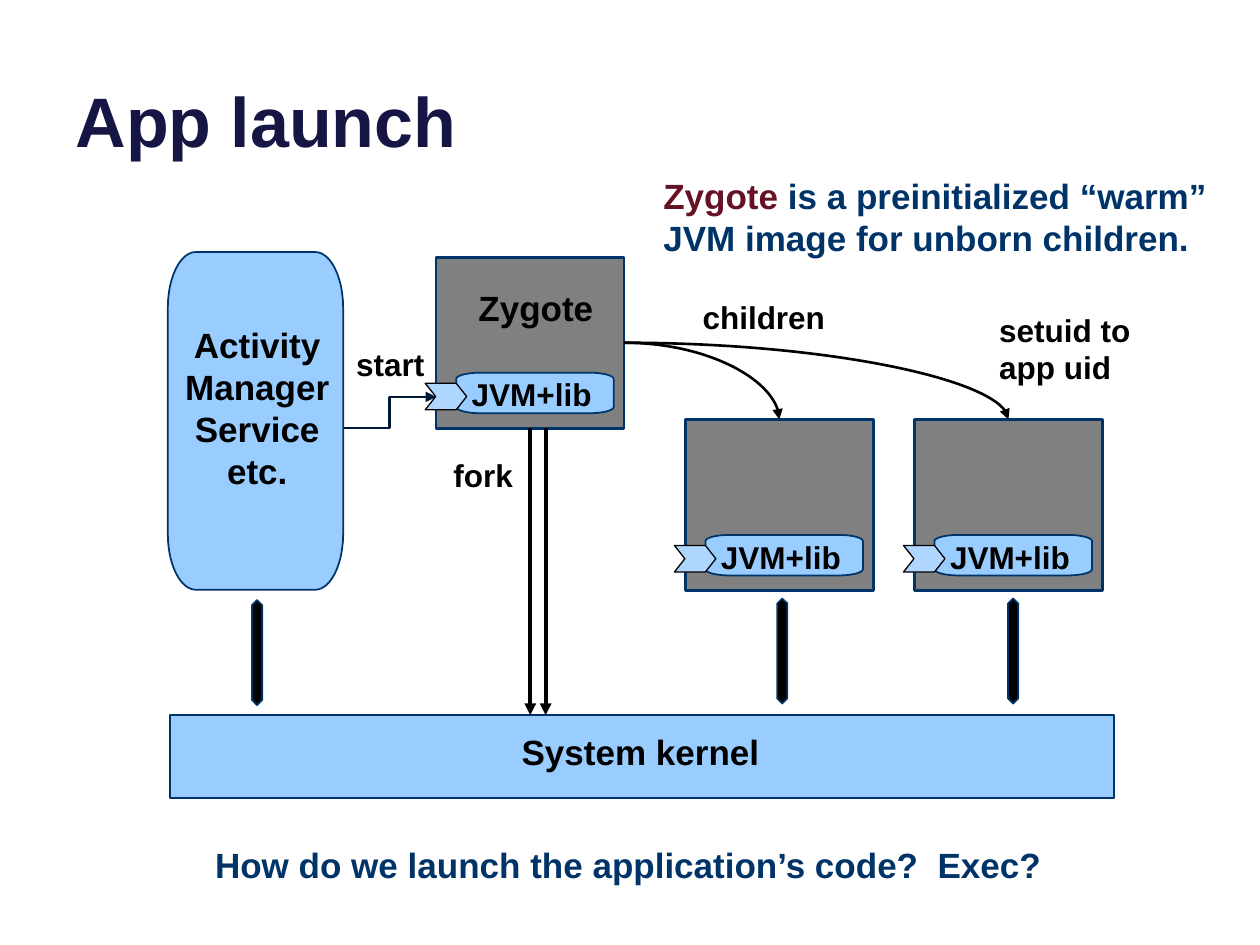
import math
import pptx
import pptx.util
import pptx.dml.color
import pptx.enum.shapes
import pptx.enum.text
import pptx.oxml
import pptx.oxml.ns

Pt = pptx.util.Pt
SHAPE = pptx.enum.shapes.MSO_SHAPE
CONNECTOR = pptx.enum.shapes.MSO_CONNECTOR
ALIGN = pptx.enum.text.PP_ALIGN
FONT = "Arial"
COLORS = {
    "title": "161645", "navy": "003367", "dark navy": "001934", "black": "000000",
    "maroon": "651222", "blue": "99CCFF", "pale blue": "AED6FF", "gray": "808080",
}

TITLE = "App launch"
MANAGER = (95.9, 144, 100.2, 193)
KERNEL = (97, 408.7, 539.5, 47.5)
PROCESS_SIZE = (107.5, 97.7)
ZYGOTE = (249.2, 147)
CHILDREN = [(391.6, 239.7), (522.5, 239.7)]
JVM_LABEL = "JVM+lib"
FORK_LINES = [303, 311.8]
KERNEL_ARROWS = [(144, 342.9), (444.1, 342), (576, 342)]
KERNEL_ARROW_SIZE = (5.8, 60)
LABELS = [
    (["System kernel"], (291, 414, 180, 31.5), 20, "black", ALIGN.LEFT),
    (["Activity Manager Service", "etc."], (84, 181.5, 126, 104.4), 20, "black", ALIGN.CENTER),
    (["Zygote"], (243.2, 160, 126, 31.5), 20, "black", ALIGN.CENTER),
    (["start"], (196.4, 193.8, 133, 29.1), 18, "black", ALIGN.LEFT),
    (["fork"], (252, 257.2, 133, 29.1), 18, "black", ALIGN.LEFT),
    (["children"], (394.4, 166.6, 133, 29.1), 18, "black", ALIGN.LEFT),
    (["setuid to app uid"], (563.9, 174, 96.5, 50.9), 18, "black", ALIGN.LEFT),
    (["How do we launch the application’s code?  Exec?"], (115.8, 478.7, 514, 31.5), 20, "navy", ALIGN.LEFT),
]
CAPTION = [("Zygote", "maroon"), (" is a preinitialized “warm” JVM image for unborn children.", "navy")]
CAPTION_BOX = (372, 96, 327, 55.7)

presentation = pptx.Presentation()
presentation.slide_width, presentation.slide_height = Pt(720), Pt(540)
slide = presentation.slides.add_slide(presentation.slide_layouts[5])


def color(name):
    return pptx.dml.color.RGBColor.from_string(COLORS[name])


def set_font(font, size, name):
    font.name, font.size, font.bold = FONT, Pt(size), True
    font.color.rgb = color(name)


def paint(shape, fill, line, width):
    shape.shadow.inherit = False
    shape.fill.solid()
    shape.fill.fore_color.rgb = color(fill)
    shape.line.color.rgb = color(line)
    shape.line.width = Pt(width)


def add_preset(kind, box, fill, width=1):
    shape = slide.shapes.add_shape(kind, *map(Pt, box))
    paint(shape, fill, "navy", width)
    return shape


def add_outline(points, fill, line, width):
    scaled = [(Pt(x), Pt(y)) for x, y in points]
    builder = slide.shapes.build_freeform(*scaled[0])
    builder.add_line_segments(scaled[1:], close=True)
    paint(builder.convert_to_shape(), fill, line, width)


def add_rounded(box, radius_x, radius_y):
    left, top, width, height = box
    right, bottom = left + width - radius_x, top + height - radius_y
    centers = [(right, bottom), (left + radius_x, bottom),
               (left + radius_x, top + radius_y), (right, top + radius_y)]
    points = []
    for corner, (x, y) in enumerate(centers):
        for step in range(13):
            angle = math.radians(corner * 90 + step * 7.5)
            points.append((x + radius_x * math.cos(angle), y + radius_y * math.sin(angle)))
    add_outline(points, "blue", "navy", 1)


def add_chevron(left, top):
    width, height, notch = 23.7, 15.2, 6
    middle = top + height / 2
    add_outline([(left, top), (left + width - notch, top), (left + width, middle),
                 (left + width - notch, top + height), (left, top + height),
                 (left + notch, middle)], "pale blue", "black", 0.75)


def add_text(lines, box, size, name, align=ALIGN.LEFT):
    frame = slide.shapes.add_textbox(*map(Pt, box)).text_frame
    frame.word_wrap = True
    frame.text = "\n".join(lines)
    for paragraph in frame.paragraphs:
        paragraph.alignment = align
        set_font(paragraph.font, size, name)
    return frame


def add_process(left, top):
    add_preset(SHAPE.RECTANGLE, (left, top, *PROCESS_SIZE), "gray", 1.5)
    add_rounded((left + 11.5, top + 66, 90, 23.2), 14, 3.6)
    add_chevron(left - 6.2, top + 72)
    add_text([JVM_LABEL], (left + 13.3, top + 64, 88, 29.1), 18, "black")


def add_arrow(kind, start, end, name, width):
    connector = slide.shapes.add_connector(kind, *map(Pt, (*start, *end)))
    connector.line.color.rgb = color(name)
    connector.line.width = Pt(width)
    properties = connector._element.spPr
    line = properties.find(pptx.oxml.ns.qn("a:ln"))
    line.append(line.makeelement(pptx.oxml.ns.qn("a:tailEnd"), {"type": "triangle"}))
    properties.append(properties.makeelement(pptx.oxml.ns.qn("a:effectLst")))
    if kind == CONNECTOR.CURVE:
        properties.find(pptx.oxml.ns.qn("a:prstGeom")).set("prst", "curvedConnector2")


title = slide.shapes.title
title.left, title.top, title.width, title.height = map(Pt, (36, -26.6, 648, 122.4))
title.text_frame.text = TITLE
title.text_frame.auto_size = pptx.enum.text.MSO_AUTO_SIZE.NONE
title.text_frame.vertical_anchor = pptx.enum.text.MSO_ANCHOR.BOTTOM
title.text_frame.paragraphs[0].alignment = ALIGN.LEFT
set_font(title.text_frame.paragraphs[0].font, 40, "title")

process_width, process_height = PROCESS_SIZE
zygote_right, zygote_bottom = ZYGOTE[0] + process_width, ZYGOTE[1] + process_height
manager_right = MANAGER[0] + MANAGER[2]

add_arrow(CONNECTOR.ELBOW, (manager_right, zygote_bottom), (ZYGOTE[0], 226.8), "dark navy", 1.5)
add_rounded(MANAGER, 16, 32)
add_preset(SHAPE.FLOWCHART_PROCESS, KERNEL, "blue")
for position in [ZYGOTE, *CHILDREN]:
    add_process(*position)
for x in FORK_LINES:
    add_arrow(CONNECTOR.STRAIGHT, (x, zygote_bottom), (x, KERNEL[1]), "black", 2.25)
for left, top in CHILDREN:
    add_arrow(CONNECTOR.CURVE, (zygote_right, ZYGOTE[1] + process_height / 2),
              (left + process_width / 2, top), "black", 1.5)
for position in KERNEL_ARROWS:
    arrow = add_preset(SHAPE.UP_DOWN_ARROW, (*position, *KERNEL_ARROW_SIZE), "black")
    arrow.adjustments[0], arrow.adjustments[1] = 0.5, 2.0
for label in LABELS:
    add_text(*label)

caption = add_text([""], CAPTION_BOX, 20, "navy").paragraphs[0]
for text, name in CAPTION:
    run = caption.add_run()
    run.text = text
    set_font(run.font, 20, name)

presentation.save("out.pptx")
